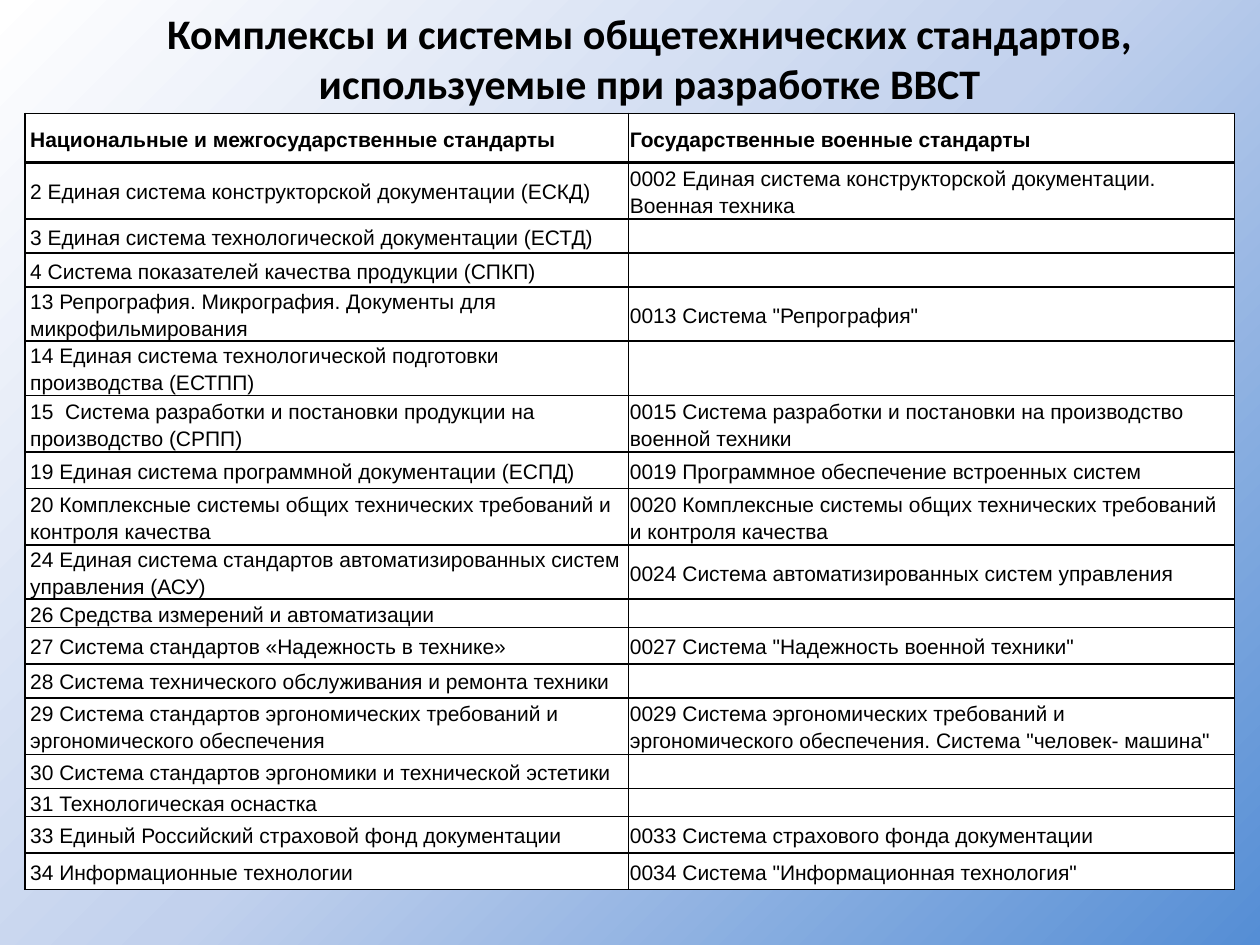
from copy import deepcopy

from lxml.etree import SubElement as Sub
from pptx import Presentation
from pptx.dml.color import RGBColor as RGB
from pptx.enum.text import MSO_ANCHOR as Anchor, PP_ALIGN as Align
from pptx.oxml.ns import qn
from pptx.util import Inches as In, Pt

TITLE = "Комплексы и системы общетехнических стандартов, используемые при разработке ВВСТ"
STOPS = [(0, "558ED5"), (0.5, "C2D1ED"), (1, "FFFFFF")]
COLS = [4.79, 4.81]
SIDES = [0.04, 0.01]  # left and right cell margins by column
ENDS = [0, 0.01]      # top and bottom cell margins by column

# Row height, national standard, military standard
ROWS = [
    (0.39, "Национальные и межгосударственные стандарты", "Государственные военные стандарты"),
    (0.41, "2 Единая система конструкторской документации (ЕСКД)",
     "0002 Единая система конструкторской документации. Военная техника"),
    (0.27, "3 Единая система технологической документации (ЕСТД)", ""),
    (0.27, "4 Система показателей качества продукции (СПКП)", ""),
    (0.39, "13 Репрография. Микрография. Документы для микрофильмирования",
     '0013 Система "Репрография"'),
    (0.39, "14 Единая система технологической подготовки производства (ЕСТПП)", ""),
    (0.41, "15  Система разработки и постановки продукции на производство (СРПП)",
     "0015 Система разработки и постановки на производство военной техники"),
    (0.29, "19 Единая система программной документации (ЕСПД)",
     "0019 Программное обеспечение встроенных систем"),
    (0.42, "20 Комплексные системы общих технических требований и контроля качества",
     "0020 Комплексные системы общих технических требований и контроля качества"),
    (0.4, "24 Единая система стандартов автоматизированных систем управления (АСУ)",
     "0024 Система автоматизированных систем управления"),
    (0.22, "26 Средства измерений и автоматизации", ""),
    (0.29, "27 Система стандартов «Надежность в технике»",
     '0027 Система "Надежность военной техники"'),
    (0.27, "28 Система технического обслуживания и ремонта техники", ""),
    (0.42, "29 Система стандартов эргономических требований и эргономического обеспечения",
     '0029 Система эргономических требований и эргономического обеспечения. Система "человек- машина"'),
    (0.27, "30 Система стандартов эргономики и технической эстетики", ""),
    (0.22, "31 Технологическая оснастка", ""),
    (0.29, "33 Единый Российский страховой фонд документации",
     "0033 Система страхового фонда документации"),
    (0.29, "34 Информационные технологии", '0034 Система "Информационная технология"'),
]


def color(code):
    return RGB.from_string(code)


def apply(obj, **vals):
    for name, val in vals.items():
        setattr(obj, name, val)


def style(font, face, size, bold):
    apply(font, name=face, size=Pt(size), bold=bold)
    font.color.rgb = color("000000")


def paint_back(slide):
    fill = slide.background.fill
    fill.gradient()
    fill.gradient_angle = 135
    stops = slide.element.find(".//" + qn("a:gsLst"))
    stops.append(deepcopy(stops[0]))
    for stop, (pos, code) in zip(fill.gradient_stops, STOPS):
        stop.color.rgb = color(code)
        stop.position = pos


def add_title(slide):
    title = slide.shapes.title
    apply(title, left=In(0.51), top=In(0.01), width=In(9.29), height=In(0.91))
    frame = title.text_frame
    apply(frame, text=TITLE, word_wrap=True, vertical_anchor=Anchor.TOP)
    para = frame.paragraphs[0]
    para.alignment = Align.CENTER
    style(para.runs[0].font, "Calibri", 24, True)


def add_edges(cell, widths):
    props = cell._tc.get_or_add_tcPr()
    for side, width in widths.items():
        line = Sub(props, qn("a:ln" + side), w=str(Pt(width)))
        fill = Sub(line, qn("a:solidFill"))
        Sub(fill, qn("a:srgbClr"), val="000000")


def fill_cell(cell, text, row, col):
    add_edges(cell, {"L": 1, "R": 1, "T": 1.5 if row == 1 else 1, "B": 1.5 if row == 0 else 1})
    cell.fill.solid()
    cell.fill.fore_color.rgb = color("FFFFFF")
    side, end = In(SIDES[col]), In(ENDS[col])
    apply(cell, margin_left=side, margin_right=side, margin_top=end, margin_bottom=end,
          vertical_anchor=Anchor.MIDDLE)
    para = cell.text_frame.paragraphs[0]
    if text:
        para.line_spacing = 1.15
        run = para.add_run()
        run.text = text
        style(run.font, "Arial", 12, row == 0)
    else:
        # Keeps an empty cell from stretching its row
        Sub(para._p, qn("a:endParaRPr"), sz="1200")


def add_grid(slide):
    high = sum(row[0] for row in ROWS)
    frame = slide.shapes.add_table(len(ROWS), len(COLS), In(0.2), In(0.9), In(sum(COLS)), In(high))
    table = frame.table
    apply(table, first_row=False, horz_banding=False)
    for col, width in zip(table.columns, COLS):
        col.width = In(width)
    for r, (height, *texts) in enumerate(ROWS):
        table.rows[r].height = In(height)
        for c, text in enumerate(texts):
            fill_cell(table.cell(r, c), text, r, c)


def main():
    deck = Presentation()
    apply(deck, slide_width=In(10), slide_height=In(7.5))
    slide = deck.slides.add_slide(deck.slide_layouts[5])  # title only
    paint_back(slide)
    add_grid(slide)
    add_title(slide)
    deck.save("out.pptx")


if __name__ == "__main__":
    main()
